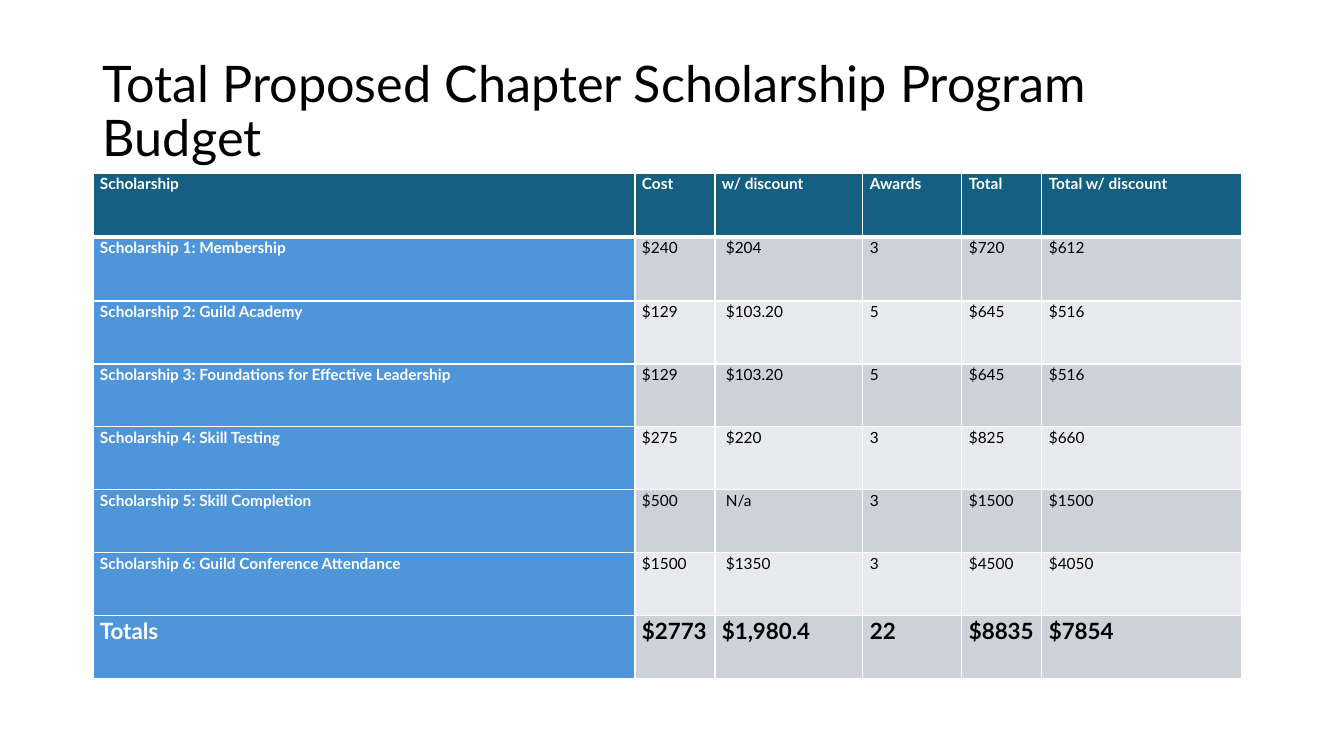
from dataclasses import dataclass

from lxml import etree
from pptx import Presentation, util as u
from pptx.dml import color
from pptx.enum import text
from pptx.oxml import ns

SCALE = 914400 / 100.8
FONT = "Lato"
WHITE, BLACK = "FFFFFF", "000000"
TEAL, BLUE = "156082", "4E95D9"
BANDS = ("CCD2D8", "E8EAED")

COLS = (542, 80, 148, 99, 80, 200)
ROWS = (64, 64) + (63,) * 6
DATA = (
    ("Scholarship", "Cost", "w/ discount", "Awards", "Total", "Total w/ discount"),
    ("Scholarship 1: Membership", "$240", " $204", "3", "$720", "$612"),
    ("Scholarship 2: Guild Academy", "$129", " $103.20", "5", "$645", "$516"),
    ("Scholarship 3: Foundations for Effective Leadership",
     "$129", " $103.20", "5", "$645", "$516"),
    ("Scholarship 4: Skill Testing", "$275", " $220", "3", "$825", "$660"),
    ("Scholarship 5: Skill Completion", "$500", " N/a", "3", "$1500", "$1500"),
    ("Scholarship 6: Guild Conference Attendance",
     "$1500", " $1350", "3", "$4500", "$4050"),
    ("Totals", "$2773", "$1,980.4", "22", "$8835", "$7854"),
)
LAST = len(DATA) - 1


@dataclass(frozen=True)
class Style:
    fill: str
    ink: str
    size: int
    bold: bool


def px(n: int) -> u.Emu:
    return u.Emu(round(n * SCALE))


def rgb(code: str) -> color.RGBColor:
    return color.RGBColor.from_string(code)


def apply(item, values: dict) -> None:
    for key, value in values.items():
        setattr(item, key, value)


def write(frame, words: str, size: int, ink: str, bold: bool, para: dict) -> None:
    line = frame.paragraphs[0]
    apply(line, para)
    run = line.add_run()
    run.text = words
    apply(run.font, {"name": FONT, "size": u.Pt(size), "bold": bold})
    run.font.color.rgb = rgb(ink)


def edge(cell, widths: dict[str, int]) -> None:
    """Draw white cell borders, given in points in schema order."""
    props = cell._tc.get_or_add_tcPr()
    for i, (side, width) in enumerate(widths.items()):
        line = etree.Element(ns.qn(f"a:ln{side}"), w=str(u.Pt(width)))
        fill = etree.SubElement(line, ns.qn("a:solidFill"))
        etree.SubElement(fill, ns.qn("a:srgbClr"), val=WHITE)
        props.insert(i, line)


def style(row: int, col: int) -> Style:
    if row == 0:
        return Style(TEAL, WHITE, 11, True)
    size = 16 if row == LAST else 11
    if col == 0:
        return Style(BLUE, WHITE, size, True)
    return Style(BANDS[(row - 1) % 2], BLACK, size, row == LAST)


def add_title(slide) -> None:
    frame = slide.shapes.add_textbox(px(93), px(40), px(1159), px(146)).text_frame
    apply(frame, {"word_wrap": True, "vertical_anchor": text.MSO_ANCHOR.MIDDLE})
    write(frame, "Total Proposed Chapter Scholarship Program Budget",
          36, BLACK, False, {"line_spacing": 0.9})


def add_budget(slide) -> None:
    table = slide.shapes.add_table(len(ROWS), len(COLS), px(93), px(173),
                                   px(sum(COLS)), px(sum(ROWS))).table
    for col, width in zip(table.columns, COLS):
        col.width = px(width)
    for row, height in zip(table.rows, ROWS):
        row.height = px(height)
    pad = {"margin_left": px(7), "margin_right": px(7),
           "margin_top": 0, "margin_bottom": 0}
    para = {"line_spacing": 1.07, "space_after": u.Pt(8)}
    for r, line in enumerate(DATA):
        for c, words in enumerate(line):
            cell, look = table.cell(r, c), style(r, c)
            apply(cell, pad)
            cell.fill.solid()
            cell.fill.fore_color.rgb = rgb(look.fill)
            write(cell.text_frame, words, look.size, look.ink, look.bold, para)
            edge(cell, {"L": 1, "R": 1, "T": 3 if r == 1 else 1,
                        "B": 3 if r == 0 else 1})


def main() -> None:
    deck = Presentation()
    apply(deck, {"slide_width": px(1344), "slide_height": px(756)})
    slide = deck.slides.add_slide(deck.slide_layouts[6])
    add_title(slide)
    add_budget(slide)
    deck.save("out.pptx")


if __name__ == "__main__":
    main()
